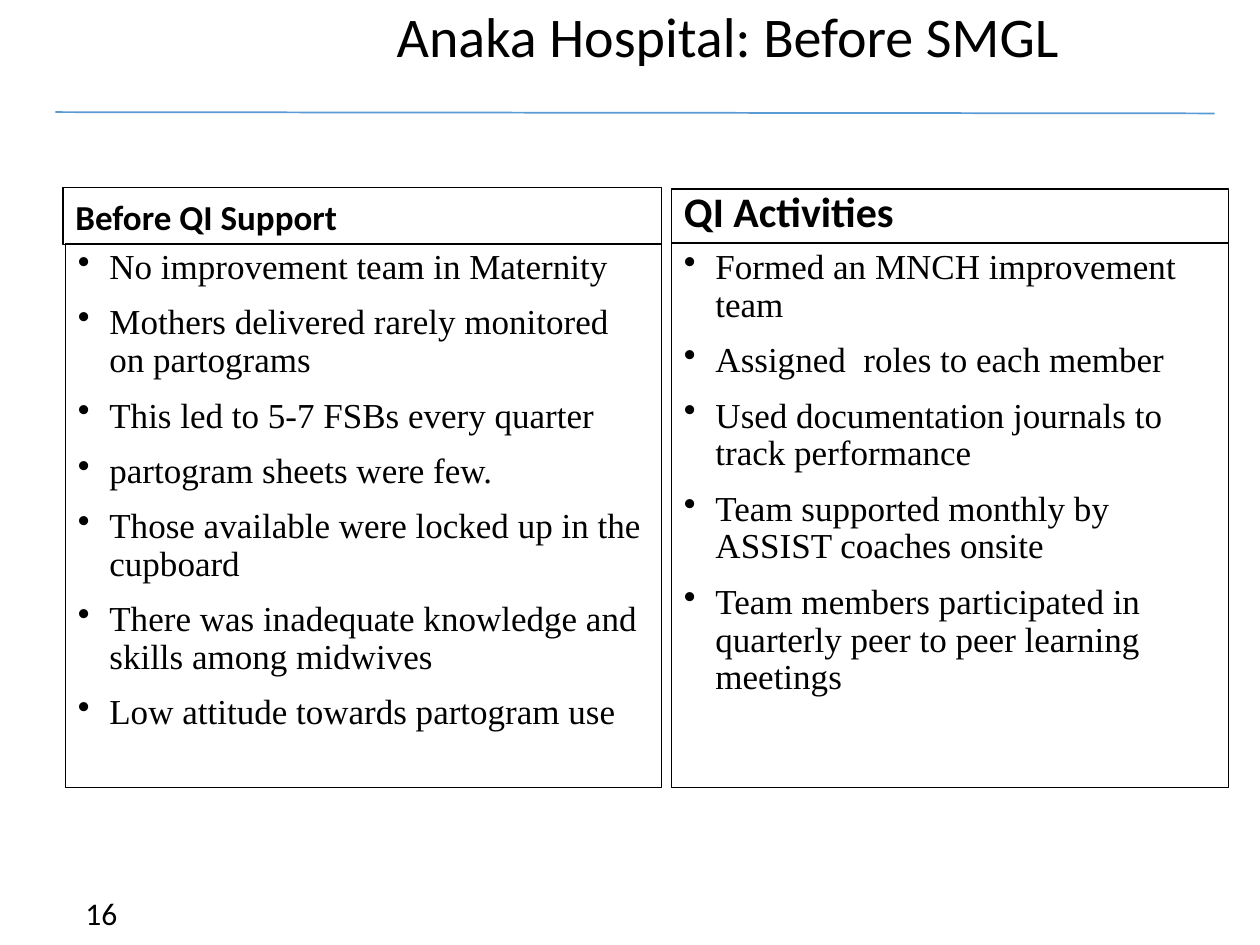
from lxml import etree
from pptx import Presentation
from pptx.dml.color import RGBColor
from pptx.enum.shapes import MSO_CONNECTOR, MSO_SHAPE
from pptx.enum.text import MSO_ANCHOR, PP_ALIGN
from pptx.oxml.ns import qn
from pptx.util import Inches, Pt

RECTANGLE = MSO_SHAPE.RECTANGLE
STRAIGHT = MSO_CONNECTOR.STRAIGHT
TOP, BOTTOM = MSO_ANCHOR.TOP, MSO_ANCHOR.BOTTOM
LEFT = PP_ALIGN.LEFT

BEFORE_SUPPORT = [
    "No improvement team in Maternity",
    "Mothers delivered rarely monitored on partograms",
    "This led to 5-7 FSBs every quarter",
    "partogram sheets were few.",
    "Those available were locked up in the cupboard",
    "There was inadequate knowledge and skills among midwives",
    "Low attitude towards partogram use",
]
ACTIVITIES = [
    "Formed an MNCH improvement team",
    "Assigned  roles to each member",
    "Used documentation journals to track performance",
    "Team supported monthly by ASSIST coaches onsite",
    "Team members participated in quarterly peer to peer learning meetings",
]


def colour(value):
    """Turn a hex string into a colour."""
    return RGBColor.from_string(value)


class SlideBuilder:
    """Hold the style and the current slide."""

    ink = "000000"
    accent = "5B9BD5"
    heading_font = "Calibri"
    body_font = "Times New Roman"
    line_spacing = 0.9
    paragraph_gap = Pt(10)
    indent = Inches(0.25)

    def __init__(self, deck):
        """Add a blank slide to the deck."""
        self.slide = deck.slides.add_slide(deck.slide_layouts[6])

    def rule(self, left, top, right, bottom):
        """Draw the line under the title."""
        line = self.slide.shapes.add_connector(
            STRAIGHT, Inches(left), Inches(top), Inches(right), Inches(bottom))
        line.line.color.rgb = colour(self.accent)
        line.line.width = Pt(1)
        etree.SubElement(line._element.spPr, qn("a:effectLst"))

    def fill_text(self, box, texts, font, size, bold=False, bullets=False, anchor=TOP):
        """Fill a box with paragraphs."""
        frame = box.text_frame
        frame.word_wrap = True
        frame.vertical_anchor = anchor
        for index, text in enumerate(texts):
            para = frame.add_paragraph() if index else frame.paragraphs[0]
            if bullets:
                properties = para._p.get_or_add_pPr()
                properties.set("marL", str(self.indent))
                properties.set("indent", str(-self.indent))
                etree.SubElement(properties, qn("a:buChar"), char="•")
            para.alignment = LEFT
            para.line_spacing = self.line_spacing
            if index:
                para.space_before = self.paragraph_gap
            span = para.add_run()
            span.text = text
            span.font.name = font
            span.font.size = Pt(size)
            span.font.bold = bold
            span.font.color.rgb = colour(self.ink)

    def label(self, text, left, top, width, height, size):
        """Add a plain line of text."""
        box = self.slide.shapes.add_textbox(
            Inches(left), Inches(top), Inches(width), Inches(height))
        self.fill_text(box, [text], self.heading_font, size)

    def frame(self, left, top, width, height):
        """Add an outlined box without fill."""
        box = self.slide.shapes.add_shape(
            RECTANGLE, Inches(left), Inches(top), Inches(width), Inches(height))
        box.shadow.inherit = False
        box.fill.background()
        box.line.color.rgb = colour(self.ink)
        box.line.width = Pt(0.75)
        return box

    def heading(self, text, left, top, width, height, size):
        """Add the bold heading of a column."""
        box = self.frame(left, top, width, height)
        self.fill_text(box, [text], self.heading_font, size, bold=True, anchor=BOTTOM)

    def bullet_list(self, texts, left, top, width, height):
        """Add the bulleted body of a column."""
        box = self.frame(left, top, width, height)
        self.fill_text(box, texts, self.body_font, 20, bullets=True)


def main():
    """Build and save the slide."""
    deck = Presentation()
    deck.slide_width, deck.slide_height = Inches(10), Inches(7.5)
    page = SlideBuilder(deck)
    page.rule(0.44, 0.89, 9.64, 0.9)
    page.label("Anaka Hospital: Before SMGL", 3.05, 0.02, 6.95, 0.89, 32)
    page.heading("Before QI Support", 0.5, 1.49, 4.75, 0.45, 20)
    page.heading("QI Activities", 5.33, 1.5, 4.42, 0.43, 24)
    page.bullet_list(ACTIVITIES, 5.33, 1.93, 4.42, 4.32)
    page.label("16", 0.58, 7.08, 2.08, 0.25, 18)
    page.bullet_list(BEFORE_SUPPORT, 0.52, 1.93, 4.73, 4.32)
    deck.save("out.pptx")


if __name__ == "__main__":
    main()
